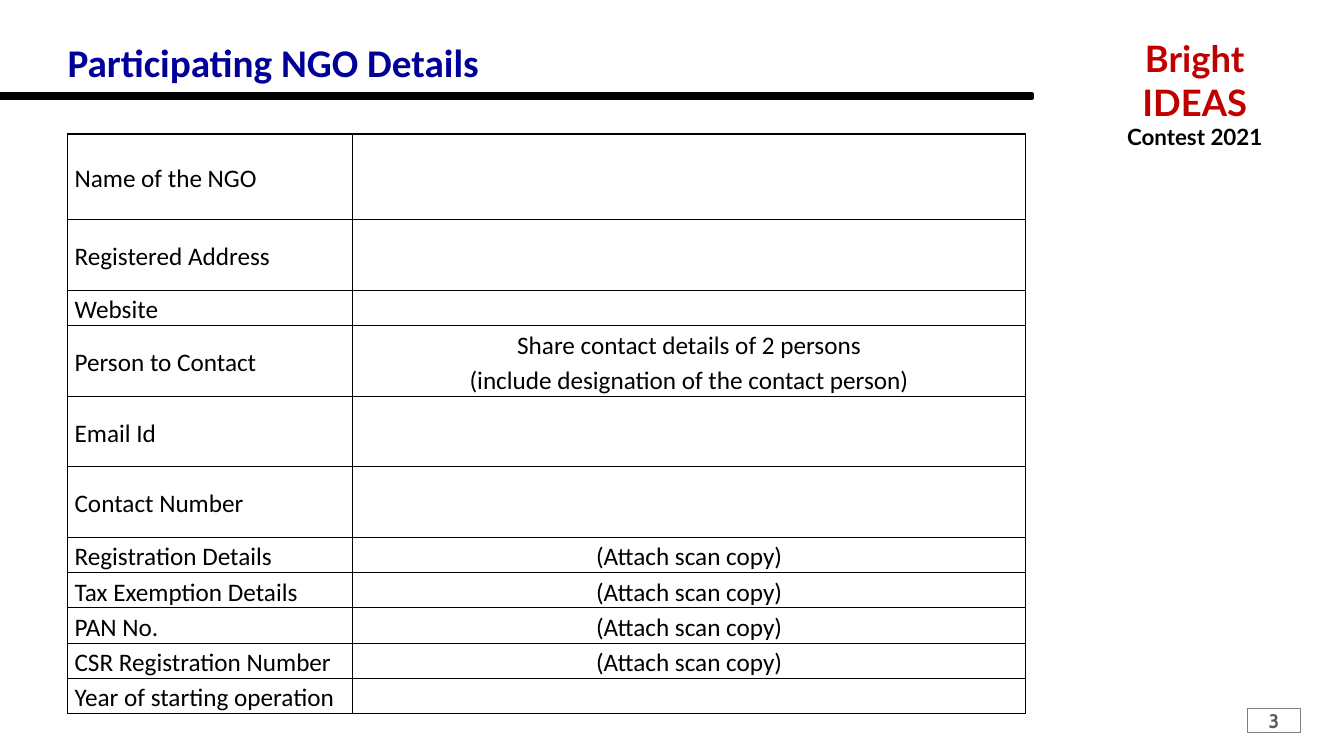
from lxml.etree import SubElement
from pptx import Presentation
from pptx.dml.color import RGBColor
from pptx.enum.shapes import MSO_SHAPE as Shape
from pptx.enum.text import MSO_ANCHOR as Anchor, PP_ALIGN as Align
from pptx.oxml.ns import qn
from pptx.util import Inches, Pt

TITLE = "Participating NGO Details"
CONTEST = [("Bright", "contest", "red"), ("IDEAS", "contest", "red"),
           ("Contest 2021", "year", "black")]
PAGE_NUMBER = "3"
SCAN = "(Attach scan copy)"
# label, answer lines, row height in inches, label anchor
DETAILS = [
    ("Name of the NGO", [], 0.85, Anchor.MIDDLE),
    ("Registered Address", [], 0.7, Anchor.MIDDLE),
    ("Website", [], 0.35, Anchor.MIDDLE),
    ("Person to Contact",
     ["\u00a0Share contact details of 2 persons".strip(),
      "(include designation of the contact person)"], 0.7, Anchor.MIDDLE),
    ("Email Id", [], 0.7, Anchor.MIDDLE),
    ("Contact Number", [], 0.7, Anchor.MIDDLE),
    ("Registration Details", [SCAN], 0.35, Anchor.TOP),
    ("Tax Exemption Details", [SCAN], 0.35, Anchor.TOP),
    ("PAN No.", [SCAN], 0.35, Anchor.TOP),
    ("CSR Registration Number", [SCAN], 0.35, Anchor.TOP),
    ("Year of starting operation", [], 0.35, Anchor.TOP),
]
COLUMN_WIDTHS = (2.83, 6.67)
THEME = {
    "colors": {"navy": "000099", "red": "C00000", "black": "000000",
               "gray": "595959", "outline": "808080"},
    "sizes": {"title": 28, "contest": 26, "year": 16, "table": 18, "page": 14},
    "fonts": {"title": "Calibri", "contest": "Lato", "year": "Lato",
              "table": "Calibri", "page": "Cabin"},
}


def color(name):
    return RGBColor.from_string(THEME["colors"][name])


def style_font(font, role, color_name, bold=True):
    font.name = THEME["fonts"][role]
    font.size = Pt(THEME["sizes"][role])
    font.color.rgb = color(color_name)
    font.bold = bold


def add_run(paragraph, text, role, color_name, bold=True):
    run = paragraph.add_run()
    run.text = text
    style_font(run.font, role, color_name, bold)


def prepare_frame(frame, anchor, vertical_inset=0):
    frame.word_wrap = True
    frame.vertical_anchor = anchor
    frame.margin_left = frame.margin_right = 0
    frame.margin_top = frame.margin_bottom = Inches(vertical_inset)
    return frame.paragraphs[0]


def add_rectangle(slide, box, line_color, line_width):
    shape = slide.shapes.add_shape(Shape.RECTANGLE, *map(Inches, box))
    shape.shadow.inherit = False
    shape.fill.background()
    shape.line.color.rgb = color(line_color)
    shape.line.width = Pt(line_width)
    return shape


def add_text_box(slide, box):
    return slide.shapes.add_textbox(*map(Inches, box)).text_frame


def add_borders(cell):
    properties = cell._tc.get_or_add_tcPr()
    for position, side in enumerate(("lnL", "lnR", "lnT", "lnB")):
        line = properties.makeelement(qn(f"a:{side}"), {"w": str(Pt(1))})
        properties.insert(position, line)
        fill = SubElement(line, qn("a:solidFill"))
        SubElement(fill, qn("a:srgbClr"), val=THEME["colors"]["black"])


def fill_cell(cell, lines, align, anchor):
    cell.margin_left = cell.margin_right = Inches(0.07)
    cell.margin_top = cell.margin_bottom = 0
    cell.vertical_anchor = anchor
    cell.fill.background()
    add_borders(cell)
    frame = cell.text_frame
    for index, text in enumerate(lines or [""]):
        paragraph = frame.add_paragraph() if index else frame.paragraphs[0]
        paragraph.alignment = align
        paragraph.line_spacing = 1.15
        if text:
            add_run(paragraph, text, "table", "black", bold=False)
        else:
            style_font(paragraph.font, "table", "black", bold=False)


def add_details_table(slide):
    height = sum(row[2] for row in DETAILS)
    box = (0.67, 1.33, sum(COLUMN_WIDTHS), height)
    table = slide.shapes.add_table(len(DETAILS), len(COLUMN_WIDTHS),
                                   *map(Inches, box)).table
    table.first_row = table.horz_banding = False
    for column, width in zip(table.columns, COLUMN_WIDTHS):
        column.width = Inches(width)
    for row, (label, answer, row_height, anchor) in zip(table.rows, DETAILS):
        row.height = Inches(row_height)
        fill_cell(row.cells[0], [label], Align.LEFT, anchor)
        fill_cell(row.cells[1], answer, Align.CENTER, Anchor.TOP)


def main():
    presentation = Presentation()
    presentation.slide_width = Inches(13.33)
    presentation.slide_height = Inches(7.5)
    slide = presentation.slides.add_slide(presentation.slide_layouts[6])

    page_box = add_rectangle(slide, (12.37, 7.03, 0.53, 0.24), "outline", 0.75)
    paragraph = prepare_frame(page_box.text_frame, Anchor.MIDDLE)
    paragraph.alignment = Align.CENTER
    add_run(paragraph, PAGE_NUMBER, "page", "gray")

    title_rule = add_rectangle(slide, (0, 0.93, 10.24, 0.05), "black", 2)
    title_rule.fill.solid()
    title_rule.fill.fore_color.rgb = color("black")

    contest = add_text_box(slide, (10.8, 0.36, 2.1, 0.71))
    paragraph = prepare_frame(contest, Anchor.TOP)
    paragraph.alignment = Align.CENTER
    for index, (text, role, color_name) in enumerate(CONTEST):
        if index:
            paragraph.add_line_break()
        add_run(paragraph, text, role, color_name)

    title = add_text_box(slide, (0.67, 0.3, 8.22, 0.62))
    add_run(prepare_frame(title, Anchor.MIDDLE, 0.05), TITLE, "title", "navy")

    add_details_table(slide)
    presentation.save("out.pptx")


if __name__ == "__main__":
    main()
